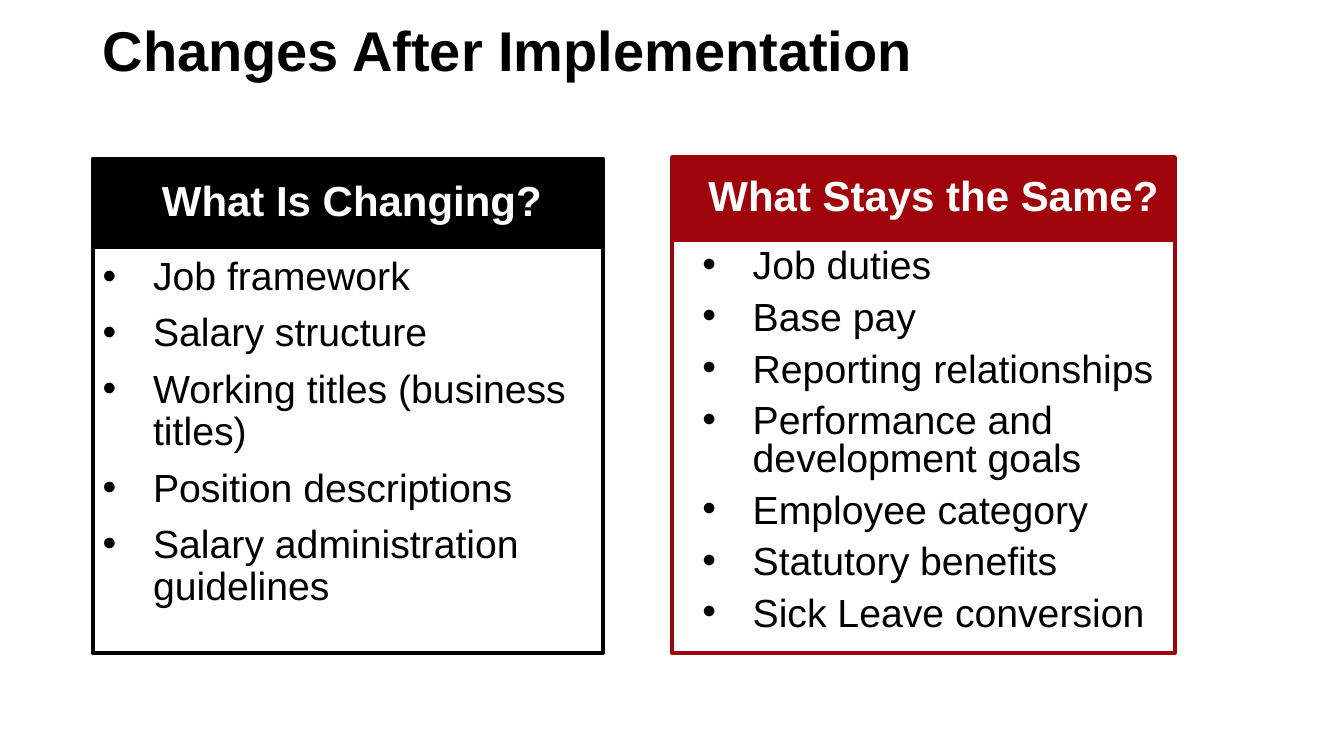
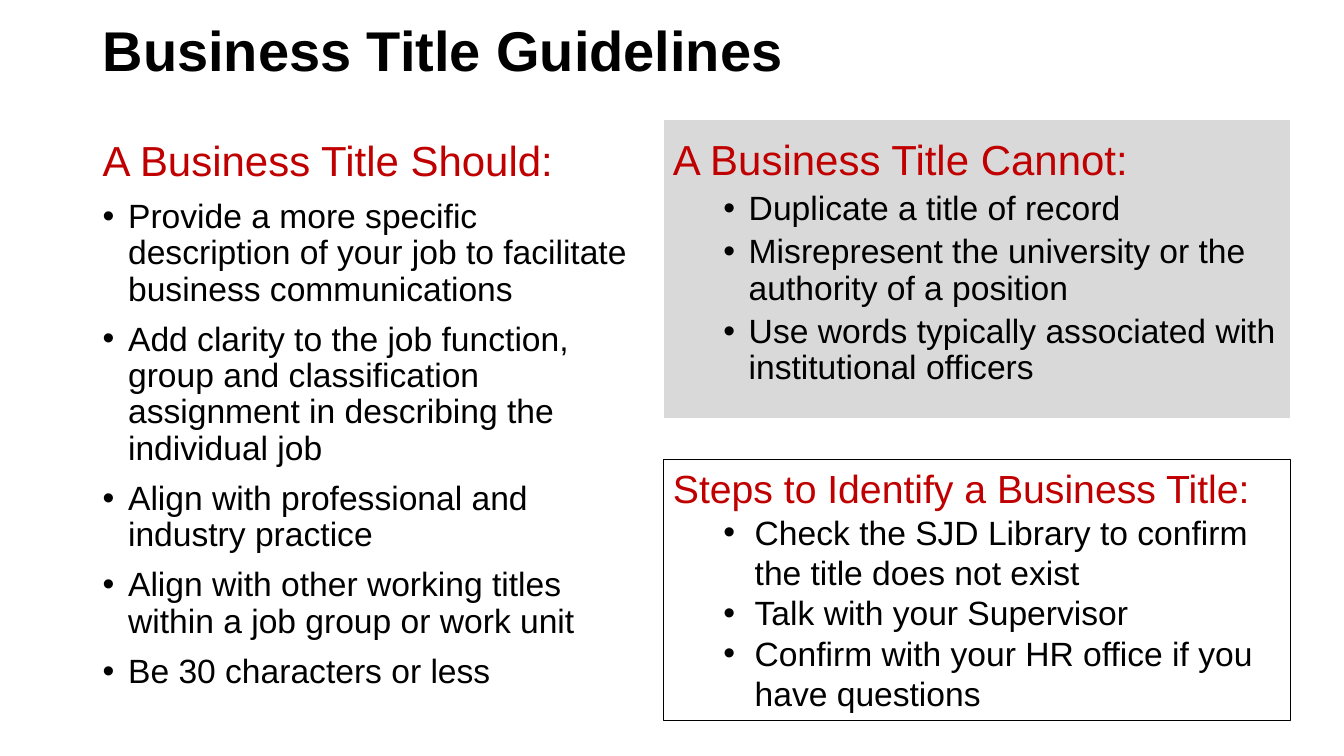
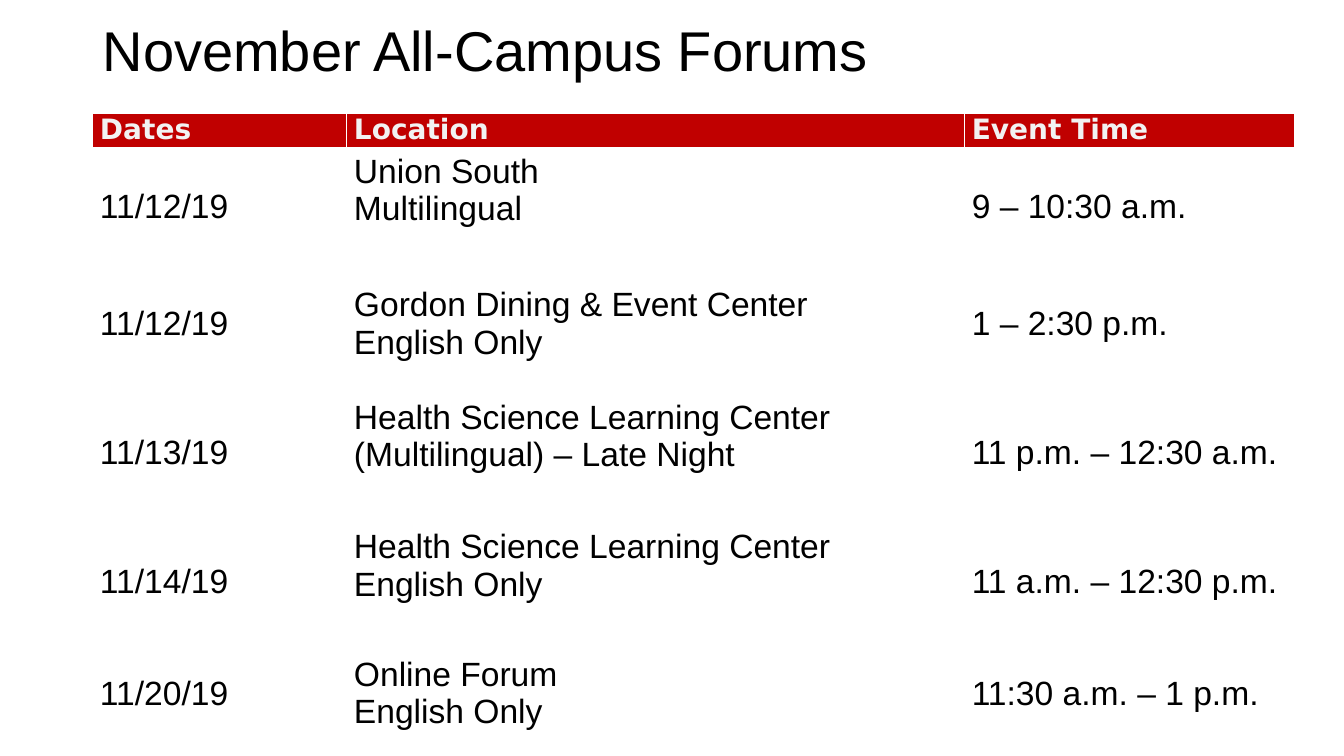
"""Builds three slides on job title changes, title guidelines and campus forums."""
from lxml import etree
from pptx import Presentation
from pptx.dml.color import RGBColor
from pptx.enum.shapes import MSO_SHAPE
from pptx.enum.text import MSO_ANCHOR, PP_ALIGN
from pptx.oxml.ns import qn
from pptx.util import Cm, Pt

RECT = MSO_SHAPE.RECTANGLE
TOP, MIDDLE = MSO_ANCHOR.TOP, MSO_ANCHOR.MIDDLE
LEFT, CENTER = PP_ALIGN.LEFT, PP_ALIGN.CENTER
BLACK = RGBColor(0x00, 0x00, 0x00)
WHITE = RGBColor(0xFF, 0xFF, 0xFF)
PALE = RGBColor(0xF2, 0xF2, 0xF2)
GREY = RGBColor(0xD9, 0xD9, 0xD9)
RED = RGBColor(0xC0, 0x00, 0x00)
DARK = RGBColor(0xA0, 0x04, 0x0B)
FONT = "Arial"
PADS = (0.25, 0.13, 0.25, 0.13)


def box(slide, place, fill=None, edge=None, width=1, pads=PADS, anchor=TOP):
    """Adds a rectangle, or a text box if it has no fill or edge; returns its text frame."""
    spot = [Cm(n) for n in place]
    if fill is None and edge is None:
        shape = slide.shapes.add_textbox(*spot)
    else:
        shape = slide.shapes.add_shape(RECT, *spot)
        shape.shadow.inherit = False
        shape.line.color.rgb = edge
        shape.line.width = Pt(width)
        if fill is None:
            shape.fill.background()
        else:
            shape.fill.solid()
            shape.fill.fore_color.rgb = fill
    frame = shape.text_frame
    frame.word_wrap = True
    frame.vertical_anchor = anchor
    frame.margin_left, frame.margin_top, frame.margin_right, frame.margin_bottom = [Cm(n) for n in pads]
    return frame


def write(frame, text, size, color=BLACK, bold=False, lead=0.9, gap=0, left=0, hang=0,
          align=LEFT, font=FONT):
    """Adds one paragraph, with a bullet if it has a hanging indent."""
    para = frame.paragraphs[0]
    if frame.text:
        para = frame.add_paragraph()
        para.space_before = Pt(gap)
    para.text = text
    para.alignment = align
    para.line_spacing = lead
    if hang:
        props = para._p.get_or_add_pPr()
        props.set("marL", str(Cm(left)))
        props.set("indent", str(-Cm(hang)))
        etree.SubElement(props, qn("a:buFont")).set("typeface", FONT)
        etree.SubElement(props, qn("a:buChar")).set("char", "•")
    para.font.name = font
    para.font.size = Pt(size)
    para.font.bold = bold
    para.font.color.rgb = color


deck = Presentation()
deck.slide_width, deck.slide_height = Cm(33.87), Cm(19.05)
pages = []
for title, bold in (
    ("Changes After Implementation", True),
    ("Business Title Guidelines", True),
    ("November All-Campus Forums", False),
):
    page = deck.slides.add_slide(deck.slide_layouts[6])
    write(box(page, (2.34, 0.46, 29.21, 1.78), anchor=MIDDLE), title, 40, bold=bold)
    pages.append(page)
change, guide, forum = pages

cards = (
    (16.94, 3.96, 12.67, 2.08, 10.41, DARK, 0.76, 0.8, "What Stays the Same?",
     ("Job duties", "Base pay", "Reporting relationships", "Performance and development goals",
      "Employee category", "Statutory benefits", "Sick Leave conversion")),
    (2.34, 4.01, 12.85, 2.21, 10.24, BLACK, 0.25, 0.9, "What Is Changing? ",
     ("Job framework", "Salary structure", "Working titles (business titles)",
      "Position descriptions", "Salary administration guidelines")),
)
for x, y, wide, high, deep, color, pad, lead, head, items in cards:
    frame = box(change, (x, y + high, wide, deep), None, color, 3, (pad, 0.25, 0.25, 0.13))
    for item in items:
        write(frame, item, 28, lead=lead, gap=10, left=1.27, hang=1.27)
    frame = box(change, (x, y, wide, high), color, color, 3, (0.76, 0.13, 0.25, 0.13), MIDDLE)
    write(frame, head, 30, WHITE, True, align=CENTER)

box(guide, (16.71, 3, 15.82, 7.54), GREY, WHITE)
lists = (
    ((2.34, 3.4, 13.84, 14.02), None, 30, 0.9, 10, 0.64, 0.64, "A Business Title Should:",
     ("Provide a more specific description of your job to facilitate business communications",
      "Add clarity to the job function, group and classification assignment in describing the individual job",
      "Align with professional and industry practice",
      "Align with other working titles within a job group or work unit",
      "Be 30 characters or less")),
    ((16.71, 3.38, 15.82, 7.75), None, 30, 0.9, 5, 1.91, 0.64, "A Business Title Cannot:",
     ("Duplicate a title of record",
      "Misrepresent the university or the authority of a position",
      "Use words typically associated with institutional officers")),
    ((16.71, 11.58, 15.82, 6.58), BLACK, 28, 1.0, 0, 2.06, 0.79, "Steps to Identify a Business Title:",
     ("Check the SJD Library to confirm the title does not exist",
      "Talk with your Supervisor",
      "Confirm with your HR office if you have questions")),
)
for place, edge, size, lead, gap, left, hang, head, items in lists:
    frame = box(guide, place, None, edge, 0.75)
    write(frame, head, size, RED, lead=lead)
    for item in items:
        write(frame, item, 24, lead=lead, gap=gap, left=left, hang=hang)

rows = (
    (0.86, 0, "Dates", "Location", "Event Time"),
    (2.95, 0.82, "11/12/19", "Union South\vMultilingual", "9 – 10:30 a.m."),
    (2.95, 0, "11/12/19", "Gordon Dining & Event Center\vEnglish Only", "1 – 2:30 p.m."),
    (3.56, 0.82, "11/13/19", "Health Science Learning Center (Multilingual) – Late Night",
     "11 p.m. – 12:30 a.m."),
    (2.95, 0.82, "11/14/19", "Health Science Learning Center\vEnglish Only", "11 a.m. – 12:30 p.m."),
    (2.67, 0, "11/20/19", "Online Forum\vEnglish Only", "11:30 a.m. – 1 p.m."),
)
table = forum.shapes.add_table(len(rows), 3, Cm(2.34), Cm(2.87), Cm(30.28), Cm(15.94)).table
table.horz_banding = False
for col, wide in zip(table.columns, (6.4, 15.57, 8.31)):
    col.width = Cm(wide)
for r, (high, lift, *texts) in enumerate(rows):
    table.rows[r].height = Cm(high)
    for c, text in enumerate(texts):
        cell = table.cell(r, c)
        cell.margin_left = cell.margin_right = Cm(0.18)
        cell.margin_top = Cm(0)
        cell.margin_bottom = Cm(lift if c == 1 else 0)
        cell.fill.solid()
        if r:
            cell.fill.fore_color.rgb = WHITE
            cell.vertical_anchor = MIDDLE
            write(cell.text_frame, text, 24, lead=1.0)
        else:
            cell.fill.fore_color.rgb = RED
            write(cell.text_frame, text, 20, PALE, True, lead=1.0, font="DejaVu Sans")

deck.save("out.pptx")
